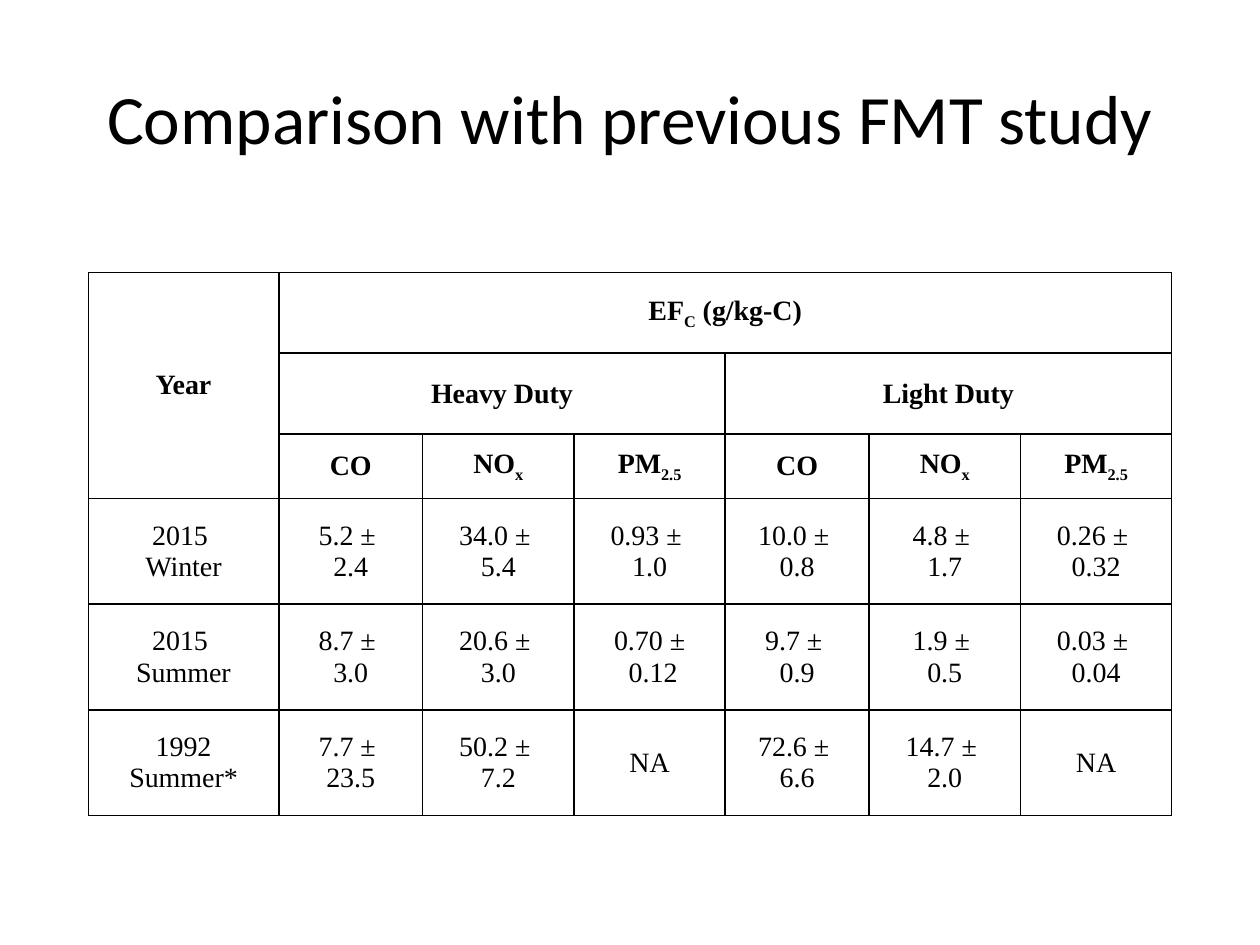
from dataclasses import dataclass

from lxml import etree
from pptx import Presentation
from pptx import util as u
from pptx.dml import color
from pptx.enum import text
from pptx.oxml import ns


@dataclass(frozen=True)
class Theme:
    ink: str = "000000"
    paper: str = "FFFFFF"
    title_font: str = "Calibri"
    table_font: str = "Times New Roman"
    title_size: float = 39.6
    table_size: float = 16
    border: float = 1


class Page:
    def __init__(self, deck, theme):
        self.theme = theme
        self.slide = deck.slides.add_slide(deck.slide_layouts[5])

    def style(self, font, **values):
        for key, value in values.items():
            setattr(font, key, value)
        font.color.rgb = color.RGBColor.from_string(self.theme.ink)

    def title(self, wording, left, top, width, height):
        heading = self.slide.shapes.title
        place = dict(left=left, top=top, width=width, height=height)
        for key, value in place.items():
            setattr(heading, key, u.Cm(value))
        heading.text_frame.vertical_anchor = text.MSO_ANCHOR.MIDDLE
        line = heading.text_frame.paragraphs[0]
        line.alignment = text.PP_ALIGN.CENTER
        run = line.add_run()
        run.text = wording
        self.style(run.font, name=self.theme.title_font,
                   size=u.Pt(self.theme.title_size))

    def table(self, left, top, widths, heights):
        lengths = map(u.Cm, (left, top, sum(widths), sum(heights)))
        grid = self.slide.shapes.add_table(
            len(heights), len(widths), *lengths).table
        for column, width in zip(grid.columns, widths):
            column.width = u.Cm(width)
        for row, height in zip(grid.rows, heights):
            row.height = u.Cm(height)
            for cell in row.cells:
                self.frame(cell)
        return grid

    def frame(self, cell):
        values = dict(margin_left=u.Cm(0.18), margin_right=u.Cm(0.18),
                      margin_top=0, margin_bottom=0,
                      vertical_anchor=text.MSO_ANCHOR.MIDDLE)
        for key, value in values.items():
            setattr(cell, key, value)
        properties = cell._tc.get_or_add_tcPr()
        for side in ("a:lnL", "a:lnR", "a:lnT", "a:lnB"):
            edge = etree.SubElement(properties, ns.qn(side),
                                    w=str(u.Pt(self.theme.border)))
            fill = etree.SubElement(edge, ns.qn("a:solidFill"))
            etree.SubElement(fill, ns.qn("a:srgbClr"), val=self.theme.ink)
        cell.fill.solid()
        cell.fill.fore_color.rgb = color.RGBColor.from_string(self.theme.paper)

    def label(self, cell, wording, bold=False):
        for index, wording_line in enumerate(wording.split("|")):
            frame = cell.text_frame
            line = frame.add_paragraph() if index else frame.paragraphs[0]
            line.alignment = text.PP_ALIGN.CENTER
            for part, piece in enumerate(wording_line.split("_")):
                if not piece:
                    continue
                run = line.add_run()
                run.text = piece
                self.style(run.font, name=self.theme.table_font,
                           size=u.Pt(self.theme.table_size), bold=bold)
                if part % 2:
                    run._r.get_or_add_rPr().set("baseline", "-25000")


def main():
    deck = Presentation()
    deck.slide_width, deck.slide_height = u.Cm(25.4), u.Cm(19.05)
    page = Page(deck, Theme())
    page.title("Comparison with previous FMT study", 1.27, 0.76, 22.86, 3.18)

    duty_widths = [2.9, 3.05, 3.05]
    emissions = page.table(1.78, 5.49, [3.84] + duty_widths * 2,
                           [1.63, 1.63, 1.3] + [2.13] * 3)

    headings = [
        (0, 0, 2, 0, "Year"),
        (0, 1, 0, 6, "EF_C_ (g/kg-C)"),
        (1, 1, 1, 3, "Heavy Duty"),
        (1, 4, 1, 6, "Light Duty"),
    ]
    for top, left, bottom, right, heading in headings:
        corner = emissions.cell(top, left)
        corner.merge(emissions.cell(bottom, right))
        page.label(corner, heading, bold=True)
    for column, pollutant in enumerate(["CO", "NO_x_", "PM_2.5_"] * 2, 1):
        page.label(emissions.cell(2, column), pollutant, bold=True)

    seasons = [
        ["2015 |Winter", "5.2 ± |2.4", "34.0 ± |5.4", "0.93 ± |1.0",
         "10.0 ± |0.8", "4.8 ± |1.7", "0.26 ± |0.32"],
        ["2015 |Summer", "8.7 ± |3.0", "20.6 ± |3.0", "0.70 ±| 0.12",
         "9.7 ± |0.9", "1.9 ± |0.5", "0.03 ± |0.04"],
        ["1992|Summer*", "7.7 ± |23.5", "50.2 ± |7.2", "NA",
         "72.6 ± |6.6", "14.7 ± |2.0", "NA"],
    ]
    for row, season in enumerate(seasons, 3):
        for column, factor in enumerate(season):
            page.label(emissions.cell(row, column), factor)

    deck.save("out.pptx")


if __name__ == "__main__":
    main()
